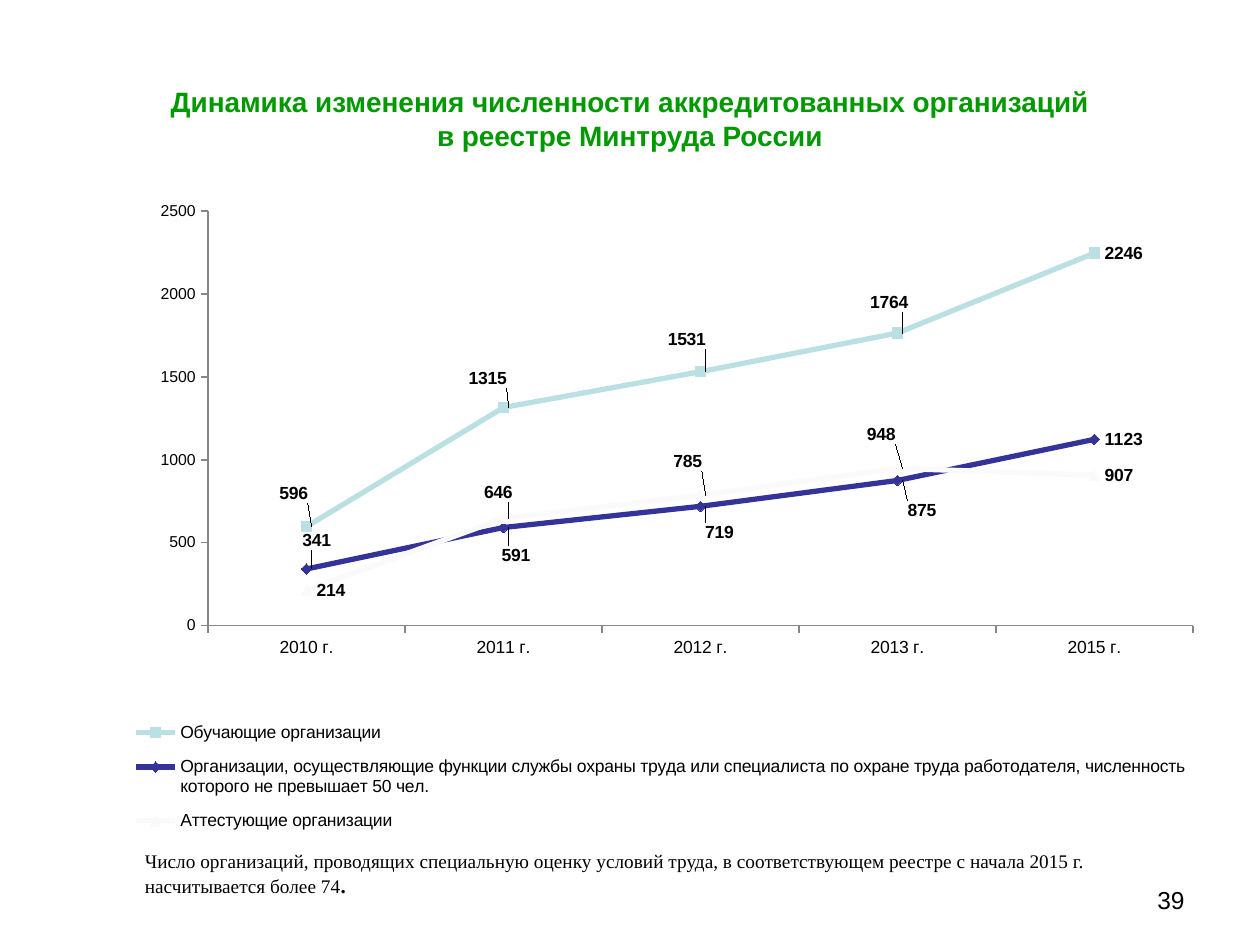
from lxml import etree
from pptx import Presentation, util as u
from pptx.chart import data
from pptx.dml import color
from pptx.enum import chart as ch, text
from pptx.oxml import ns

WIDTH, HEIGHT = u.Inches(10), u.Inches(7.5)
YEARS = ["2010 г.", "2011 г.", "2012 г.", "2013 г.", "2015 г."]
MARK = ch.XL_MARKER_STYLE
SERIES = [
    ("Обучающие организации", [596, 1315, 1531, 1764, 2246], "BBE0E3", MARK.SQUARE,
     {0: (-0.034, -0.048), 1: (-0.041, -0.042), 2: (-0.039, -0.047), 3: (-0.034, -0.045)}),
    ("Организации, осуществляющие функции службы охраны труда или специалиста по охране "
     "труда работодателя, численность которого не превышает 50 чел.",
     [341, 591, 719, 875, 1123], "333399", MARK.DIAMOND,
     {0: (-0.013, -0.042), 1: (-0.011, 0.041), 2: (-0.005, 0.038), 3: (0, 0.044)}),
    ("Аттестующие организации", [214, 646, 785, 948, 907], "FAFAFA", MARK.TRIANGLE,
     {1: (-0.027, -0.038), 2: (-0.034, -0.05), 3: (-0.037, -0.05)}),
]


def rgb(value):
    """Turn a hex string into a colour."""
    return color.RGBColor.from_string(value)


def place(x, y, w, h):
    """Turn shares of the slide's size into lengths."""
    return int(x * WIDTH), int(y * HEIGHT), int(w * WIDTH), int(h * HEIGHT)


def set_font(font, size, bold=False, name="Arial", value="000000"):
    """Set face, size, weight and colour of a font."""
    font.name, font.size, font.bold = name, u.Pt(size), bold
    font.color.rgb = rgb(value)


def add_text(s, box, lines, align, anchor, size, left=0, **style):
    """Add a text box with one paragraph per line and return its text frame."""
    tf = s.shapes.add_textbox(*place(*box)).text_frame
    tf.word_wrap, tf.vertical_anchor = True, anchor
    tf.margin_left = u.Inches(0.1 + left)
    for i, line in enumerate(lines):
        p = tf.paragraphs[0] if i == 0 else tf.add_paragraph()
        p.text, p.alignment = line, align
        for r in p.runs:
            set_font(r.font, size, **style)
    return tf


def make_layout(**values):
    """Build a manual chart layout from its named values."""
    layout = etree.Element(ns.qn("c:layout"))
    manual = etree.SubElement(layout, ns.qn("c:manualLayout"))
    for key, value in values.items():
        etree.SubElement(manual, ns.qn("c:" + key)).set("val", str(value))
    return layout


def set_layout(parent, layout, before):
    """Put a layout in a chart part after the named element."""
    for old in parent.findall(ns.qn("c:layout")):
        parent.remove(old)
    anchor = parent.find(ns.qn(before)) if before else None
    if anchor is None:
        parent.insert(0, layout)
    else:
        anchor.addnext(layout)


def style_series(series, value, marker, offsets):
    """Format a line, its markers and its shifted value labels."""
    series.smooth = False
    series.format.line.color.rgb, series.format.line.width = rgb(value), u.Pt(3)
    series.marker.style, series.marker.size = marker, 6
    for part in (series.marker.format.fill, series.marker.format.line.fill):
        part.solid()
        part.fore_color.rgb = rgb(value)
    labels = series.data_labels
    labels.show_value, labels.position = True, ch.XL_LABEL_POSITION.RIGHT
    set_font(labels.font, 10, True)
    for i in offsets:
        label = series.points[i].data_label
        label.position = ch.XL_LABEL_POSITION.RIGHT
        set_font(label.font, 10, True)
    for item in labels._element.findall(ns.qn("c:dLbl")):
        dx, dy = offsets[int(item.find(ns.qn("c:idx")).get("val"))]
        set_layout(item, make_layout(x=dx, y=dy), "c:idx")


def style_axis(axis, size):
    """Format an axis with a grey line and outside ticks."""
    axis.has_major_gridlines = False
    axis.major_tick_mark = ch.XL_TICK_MARK.OUTSIDE
    axis.format.line.color.rgb, axis.format.line.width = rgb("868686"), u.Pt(1)
    set_font(axis.tick_labels.font, size)


def add_line_chart(s, box):
    """Add the line chart of organisation numbers."""
    chart_data = data.CategoryChartData()
    chart_data.categories = YEARS
    for name, values, *_ in SERIES:
        chart_data.add_series(name, values)
    chart = s.shapes.add_chart(ch.XL_CHART_TYPE.LINE_MARKERS, *place(*box), chart_data).chart
    set_font(chart.font, 10)
    chart.has_title = False
    chart.plots[0].vary_by_categories = False
    style_axis(chart.category_axis, 10)
    style_axis(chart.value_axis, 9)
    chart.value_axis.minimum_scale, chart.value_axis.maximum_scale = 0, 2500
    chart.value_axis.major_unit = 500
    for series, (_, _, value, marker, offsets) in zip(chart.plots[0].series, SERIES):
        style_series(series, value, marker, offsets)
    plot_area = chart._chartSpace.chart.plotArea
    set_layout(plot_area, make_layout(layoutTarget="inner", xMode="edge", yMode="edge",
                                      x=0.094, y=0.053, w=0.895, h=0.606), None)
    chart.has_legend = True
    chart.legend.position = ch.XL_LEGEND_POSITION.BOTTOM
    chart.legend.include_in_layout = False
    set_font(chart.legend.font, 10)
    set_layout(chart.legend._element, make_layout(xMode="edge", yMode="edge",
                                                  x=0.02, y=0.78, w=0.97, h=0.2), "c:legendPos")


def main():
    """Build the slide and save it."""
    prs = Presentation()
    prs.slide_width, prs.slide_height = WIDTH, HEIGHT
    s = prs.slides.add_slide(prs.slide_layouts[6])
    align, anchor = text.PP_ALIGN, text.MSO_ANCHOR
    add_text(s, (0.05, 0.04, 0.9, 0.17),
             ["Динамика изменения численности аккредитованных организаций\v"
              "в реестре Минтруда России"],
             align.CENTER, anchor.MIDDLE, 16, bold=True, value="009900")
    add_text(s, (0.9, 0.93, 0.05, 0.05), ["39"], align.RIGHT, anchor.TOP, 14)
    add_line_chart(s, (0.083, 0.185, 0.874, 0.724))
    tf = add_text(s, (0.067, 0.888, 0.843, 0.073),
                  ["Число организаций, проводящих специальную оценку условий труда, "
                   "в соответствующем реестре с начала 2015 г.", "насчитывается более 74"],
                  align.LEFT, anchor.MIDDLE, 11, left=0.38, name="Times New Roman")
    r = tf.paragraphs[1].add_run()
    r.text = "."
    set_font(r.font, 12, True, "Times New Roman")
    prs.save("out.pptx")


if __name__ == "__main__":
    main()
